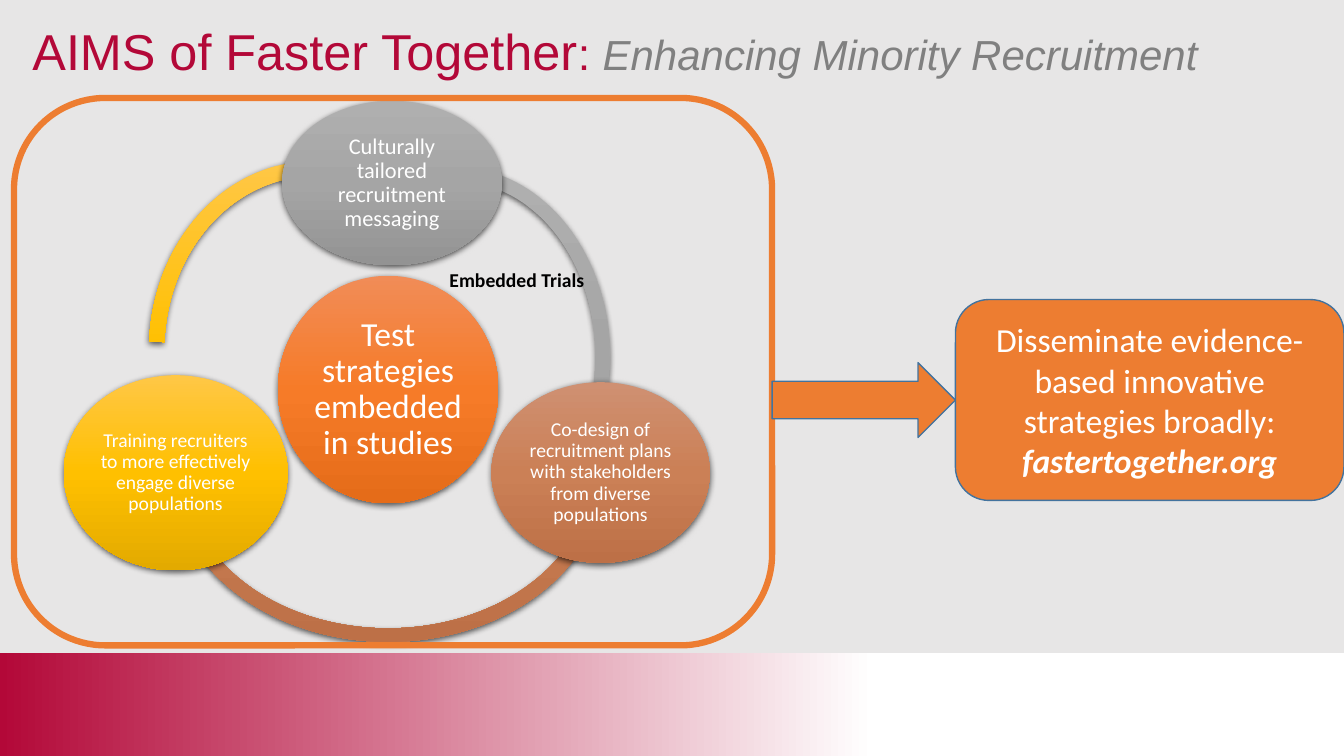
"""Build the slide on the aims of Faster Together."""
from lxml import etree
from pptx import Presentation
from pptx.dml.color import RGBColor
from pptx.enum import shapes, text
from pptx.oxml.ns import qn
from pptx.util import Pt

HUES = {"bg": "E7E6E6", "red": "B30838", "grey": "808080", "white": "FFFFFF",
        "black": "000000", "orange": "ED7D31", "edge": "43739E"}
RAMPS = {
    "gold": [(0, "FFC746"), (50, "FFC000"), (100, "E3AA00")],
    "brown": [(0, "CF9072"), (50, "CB8056"), (100, "BD7047")],
    "grey": [(0, "AFAFAF"), (50, "A5A5A5"), (100, "939393")],
    "orange": [(0, "F18C57"), (50, "F67B28"), (100, "E56C19")],
    "band": [(35, HUES["white"]), (100, HUES["red"])],
}
TITLE = [("AIMS of Faster Together", 36, "red", False, False),
         (": ", 32, "red", False, False),
         ("Enhancing Minority Recruitment", 30, "grey", False, True)]
ARCS = [
    ((106.5, 115, 236, 270), "gold", (183, 277, 0.046)),
    ((122.5, 216.5, 309.5, 242), "brown", (20, 160, 0.04)),
    ((216.5, 119.5, 219, 270), "grey", (265, 23, 0.046)),
]
DISCS = [
    ((198.5, 197, 157.5, 162.5), "orange", "Test strategies embedded in studies", 24),
    ((201.5, 72, 157, 117.5), "grey", "Culturally tailored recruitment messaging", 16),
    ((351, 273, 156, 129), "brown",
     "Co-design of recruitment plans with stakeholders from diverse populations", 14),
    ((45.5, 268, 160, 139.5), "gold",
     "Training recruiters to more effectively engage diverse populations", 14),
]
GOAL = [("Disseminate evidence-based innovative strategies broadly: ", 24, "white", False, False),
        ("fastertogether.org", 24, "white", True, True)]
LABEL = [("Embedded Trials", 14, "black", True, False)]
KIND = shapes.MSO_SHAPE


def hue(name):
    return RGBColor.from_string(HUES[name])


def write(frame, runs, font="Calibri", align=text.PP_ALIGN.CENTER, lead=None):
    frame.word_wrap = True
    para = frame.paragraphs[0]
    para.alignment = align
    if lead:
        para.line_spacing = lead
    for words, size, tint, bold, slant in runs:
        run = para.add_run()
        run.text = words
        run.font.name, run.font.size = font, Pt(size)
        run.font.bold, run.font.italic = bold, slant
        run.font.color.rgb = hue(tint)


def draw(slide, kind, box, fill=None, line=None, width=1):
    shape = slide.shapes.add_shape(kind, *map(Pt, box))
    shape.shadow.inherit = False
    if fill:
        shape.fill.solid()
        shape.fill.fore_color.rgb = hue(fill)
    else:
        shape.fill.background()
    if line:
        shape.line.color.rgb = hue(line)
        shape.line.width = Pt(width)
    else:
        shape.line.fill.background()
    return shape


def shade(shape, ramp, angle):
    shape.fill.gradient()
    shape.fill.gradient_angle = angle
    stops = shape.element.spPr.find(".//" + qn("a:gsLst"))
    for stop in list(stops):
        stops.remove(stop)
    for place, tint in RAMPS[ramp]:
        stop = etree.SubElement(stops, qn("a:gs"), pos=str(place * 1000))
        etree.SubElement(stop, qn("a:srgbClr"), val=tint)


def glow(shape):
    effects = shape.element.spPr.find(qn("a:effectLst"))
    drop = etree.SubElement(effects, qn("a:outerShdw"), blurRad=str(Pt(4.5)),
                            dist=str(Pt(1.5)), dir="5400000", algn="ctr", rotWithShape="0")
    tint = etree.SubElement(drop, qn("a:srgbClr"), val=HUES["black"])
    etree.SubElement(tint, qn("a:alpha"), val="63000")


def main():
    deck = Presentation()
    deck.slide_width, deck.slide_height = Pt(960), Pt(540)
    slide = deck.slides.add_slide(deck.slide_layouts[5])
    slide.background.fill.solid()
    slide.background.fill.fore_color.rgb = hue("bg")

    shade(draw(slide, KIND.RECTANGLE, (0, 466.5, 960, 73.5)), "band", 180)

    title = slide.shapes.title
    title.left, title.top, title.width, title.height = map(Pt, (16, 0, 927, 78))
    title.text_frame.vertical_anchor = text.MSO_ANCHOR.MIDDLE
    write(title.text_frame, TITLE, "Arial", text.PP_ALIGN.LEFT, 0.9)

    for box, ramp, (start, end, thick) in ARCS:
        arc = draw(slide, KIND.BLOCK_ARC, box)
        for i, value in enumerate((start * 0.6, end * 0.6, thick)):
            arc.adjustments[i] = value
        shade(arc, ramp, 270)
        glow(arc)

    for box, ramp, words, size in DISCS:
        disc = draw(slide, KIND.OVAL, box)
        shade(disc, ramp, 270)
        glow(disc)
        frame = disc.text_frame
        frame.margin_left = frame.margin_right = Pt(2)
        frame.margin_top = frame.margin_bottom = Pt(2)
        frame.vertical_anchor = text.MSO_ANCHOR.MIDDLE
        write(frame, [(words, size, "white", False, False)], lead=0.9)

    draw(slide, KIND.ROUNDED_RECTANGLE, (10, 70, 541.5, 391), line="orange", width=4.5)
    label = slide.shapes.add_textbox(*map(Pt, (314, 188, 155.5, 24.5)))
    write(label.text_frame, LABEL, align=text.PP_ALIGN.LEFT)

    draw(slide, KIND.RIGHT_ARROW, (551.5, 259, 131, 53.5), "orange", "edge")
    goal = draw(slide, KIND.ROUNDED_RECTANGLE, (682.5, 214, 277.5, 143.5), "orange", "edge")
    goal.text_frame.vertical_anchor = text.MSO_ANCHOR.MIDDLE
    write(goal.text_frame, GOAL)

    deck.save("out.pptx")


if __name__ == "__main__":
    main()
